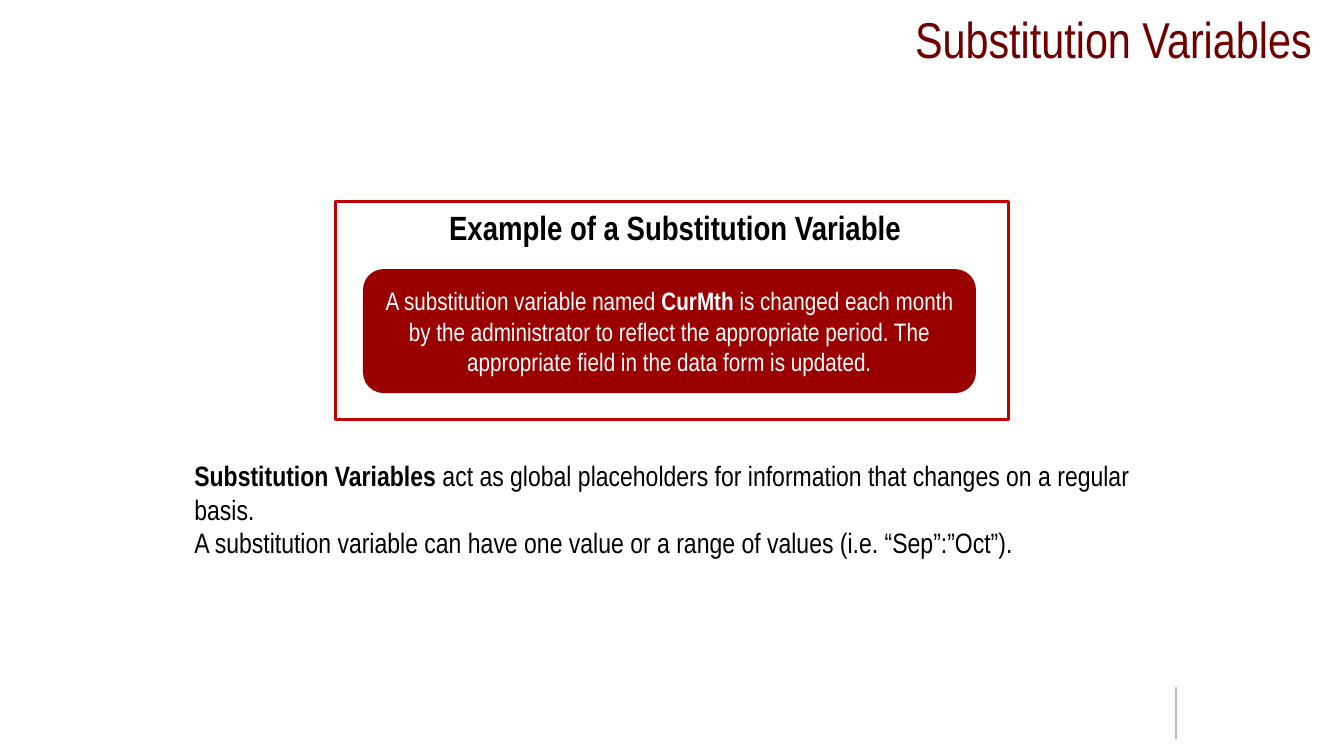
import pptx
import pptx.dml.color
import pptx.enum.shapes
import pptx.enum.text
import pptx.oxml
import pptx.oxml.ns
import pptx.util

Inches = pptx.util.Inches
Pt = pptx.util.Pt
ALIGN = pptx.enum.text.PP_ALIGN
ANCHOR = pptx.enum.text.MSO_ANCHOR
SHAPE = pptx.enum.shapes.MSO_SHAPE


def color(hex_value):
    return pptx.dml.color.RGBColor.from_string(hex_value)


def write_text(frame, paragraphs, size, ink="000000", align=ALIGN.LEFT,
               anchor=ANCHOR.TOP, font="Arial Narrow"):
    """Fill a frame; each paragraph is a list of (text, bold) runs."""
    frame.word_wrap = True
    frame.vertical_anchor = anchor
    for index, runs in enumerate(paragraphs):
        paragraph = frame.add_paragraph() if index else frame.paragraphs[0]
        paragraph.alignment = align
        for text, bold in runs:
            run = paragraph.add_run()
            run.text = text
            run.font.name = font
            run.font.size = Pt(size)
            run.font.bold = bold
            run.font.color.rgb = color(ink)


class SlideBuilder:
    TITLE = "700000"
    FRAME = "C00000"
    PANEL = "9A0000"
    RULE = "BFBFBF"

    def __init__(self, slide):
        self.shapes = slide.shapes

    def text(self, box, paragraphs, size, **style):
        area = self.shapes.add_textbox(*map(Inches, box))
        write_text(area.text_frame, paragraphs, size, **style)

    def shape(self, kind, box, fill=None, line=None, width=2):
        item = self.shapes.add_shape(kind, *map(Inches, box))
        item.shadow.inherit = False
        if fill:
            item.fill.solid()
            item.fill.fore_color.rgb = color(fill)
        else:
            item.fill.background()
        if line:
            item.line.color.rgb = color(line)
            item.line.width = Pt(width)
        else:
            item.line.fill.background()
        return item

    def rule(self, start, end, width):
        rule = self.shapes.add_connector(
            pptx.enum.shapes.MSO_CONNECTOR.STRAIGHT, *map(Inches, start + end))
        rule.line.color.rgb = color(self.RULE)
        rule.line.width = Pt(width)
        properties = rule._element.find(pptx.oxml.ns.qn("p:spPr"))
        properties.append(pptx.oxml.parse_xml(
            f'<a:effectLst {pptx.oxml.ns.nsdecls("a")}/>'))


def main():
    deck = pptx.Presentation()
    deck.slide_width, deck.slide_height = Inches(13.33), Inches(7.5)
    build = SlideBuilder(deck.slides.add_slide(deck.slide_layouts[6]))

    build.rule((11.66, 6.82), (11.66, 7.33), 1.5)
    build.text((1.83, 4.5, 9.5, 1.11), [
        [("Substitution Variables ", True),
         ("act as global placeholders for information that changes on a "
          "regular basis.", False)],
        [("A substitution variable can have one value or a range of values "
          "(i.e. “Sep”:”Oct”).", False)],
    ], 20)

    build.text((2.01, 2, 9.37, 0.5),
               [[("Example of a Substitution Variable", True)]],
               24, align=ALIGN.CENTER)
    build.shape(SHAPE.RECTANGLE, (3.33, 2, 6.67, 2.16), line=build.FRAME)
    example = build.shape(SHAPE.ROUNDED_RECTANGLE, (3.6, 2.67, 6.08, 1.23),
                          fill=build.PANEL)
    write_text(example.text_frame, [[
        ("A substitution variable named ", False),
        ("CurMth ", True),
        ("is changed each month by the administrator to reflect the "
         "appropriate period. The appropriate field in the data form is "
         "updated.", False),
    ]], 18, ink="FFFFFF", align=ALIGN.CENTER, anchor=ANCHOR.MIDDLE)

    build.text((3.11, 0.08, 10, 0.6), [[("Substitution Variables", False)]],
               36, ink=build.TITLE, align=ALIGN.RIGHT, anchor=ANCHOR.MIDDLE)
    deck.save("out.pptx")


if __name__ == "__main__":
    main()
